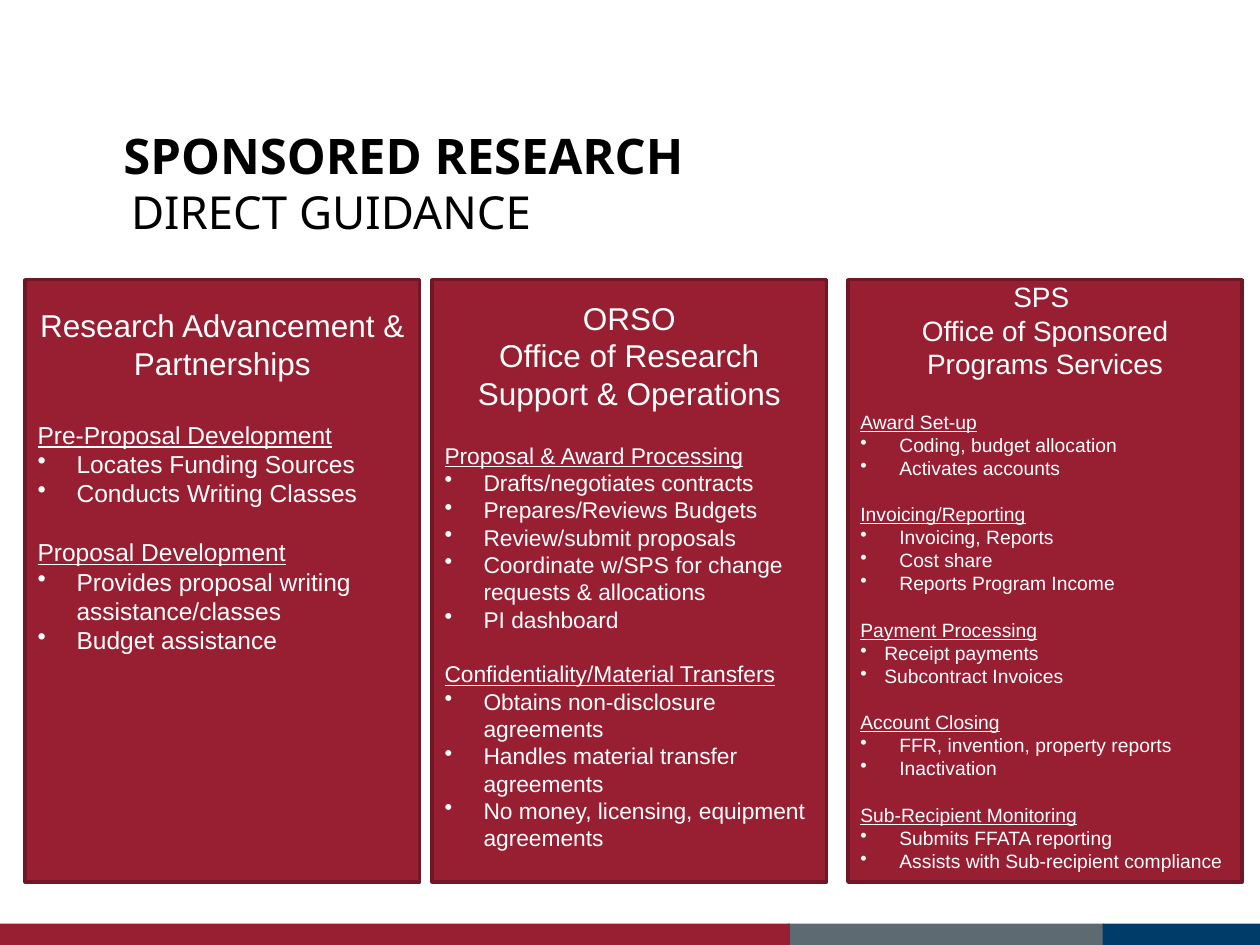
import pptx
import pptx.util
import pptx.dml.color
import pptx.enum.shapes
import pptx.enum.text
import pptx.oxml

Inches = pptx.util.Inches
Pt = pptx.util.Pt
Align = pptx.enum.text.PP_ALIGN
Anchor = pptx.enum.text.MSO_ANCHOR

COLORS = {"red": "981E32", "edge": "701625", "gray": "5E6A71",
          "blue": "003C69", "ink": "000000", "white": "FFFFFF"}

BARS = [(6.25, 2.51, "gray"), (8.75, 1.25, "blue"), (0, 6.27, "red")]

# Each card: left, top inset, head size, text size, gap under head,
# head lines, then sections of (name, indent, items)
CARDS = [
    (0.2, 0.21, 18, 14, 21.6, ["Research Advancement &", "Partnerships"], [
        ("Pre-Proposal Development", 0.31,
         ["Locates Funding Sources", "Conducts Writing Classes"]),
        ("Proposal Development", 0.31,
         ["Provides proposal writing assistance/classes",
          "Budget assistance"]),
    ]),
    (3.43, 0.15, 18, 13, 16.8,
     ["ORSO", "Office of Research Support & Operations"], [
         ("Proposal & Award Processing", 0.31,
          ["Drafts/negotiates contracts", "Prepares/Reviews Budgets",
           "Review/submit proposals",
           "Coordinate w/SPS for change requests & allocations",
           "PI dashboard"]),
         ("Confidentiality/Material Transfers", 0.31,
          ["Obtains non-disclosure agreements",
           "Handles material transfer agreements",
           "No money, licensing, equipment agreements"]),
     ]),
    (6.73, 0, 16, 11, 16.8,
     ["SPS ", "Office of Sponsored Programs Services"], [
         ("Award Set-up", 0.31,
          ["Coding, budget allocation", "Activates accounts"]),
         ("Invoicing/Reporting", 0.31,
          ["Invoicing, Reports", "Cost share", "Reports Program Income"]),
         ("Payment Processing", 0.19,
          ["Receipt payments", "Subcontract Invoices"]),
         ("Account Closing", 0.31,
          ["FFR, invention, property reports", "Inactivation"]),
         ("Sub-Recipient Monitoring", 0.31,
          ["Submits FFATA reporting",
           "Assists with Sub-recipient compliance"]),
     ]),
]


def rgb(name):
    return pptx.dml.color.RGBColor.from_string(COLORS[name])


def indent(para, left, hang, mark=None):
    """Set left margin and first-line indent, with a bullet or none."""
    props = para._p.get_or_add_pPr()
    props.set("marL", str(Inches(left)))
    props.set("indent", str(Inches(-hang)))
    tag = "a:buChar" if mark else "a:buNone"
    bullet = pptx.oxml.xmlchemy.OxmlElement(tag)
    if mark:
        bullet.set("char", mark)
    props.append(bullet)


class Deck:
    """Holds the style and the current slide."""

    head_font = "Noto Sans"
    text_font = "Arial"
    leading = 1.2

    def __init__(self):
        self.prs = pptx.Presentation()
        self.prs.slide_width = Inches(10)
        self.prs.slide_height = Inches(7.5)
        self.slide = self.prs.slides.add_slide(self.prs.slide_layouts[1])

    def style(self, para, font, size, color):
        para.font.name = font
        para.font.size = Pt(size)
        para.font.color.rgb = rgb(color)

    def holder(self, shape, box, text, size, anchor):
        """Move and fill a placeholder; return its paragraph."""
        shape.left, shape.top, shape.width, shape.height = map(Inches, box)
        frame = shape.text_frame
        frame.text = text
        frame.word_wrap = True
        frame.auto_size = pptx.enum.text.MSO_AUTO_SIZE.NONE
        frame.vertical_anchor = anchor
        para = frame.paragraphs[0]
        para.alignment = Align.LEFT
        self.style(para, self.head_font, size, "ink")
        return para

    def rect(self, left, top, width, height, fill, edge=None):
        shape = self.slide.shapes.add_shape(
            pptx.enum.shapes.MSO_SHAPE.RECTANGLE,
            *map(Inches, (left, top, width, height)))
        shape.shadow.inherit = False
        shape.fill.solid()
        shape.fill.fore_color.rgb = rgb(fill)
        if edge:
            shape.line.color.rgb = rgb(edge)
            shape.line.width = Pt(2)
        else:
            shape.line.fill.background()
        return shape

    def line(self, frame, text, size, align=Align.LEFT, gap=0):
        """Add a paragraph, using the empty first one if it is there."""
        para = frame.paragraphs[0]
        if para.runs:
            para = frame.add_paragraph()
        para.text = text
        para.alignment = align
        para.space_before = Pt(gap)
        self.style(para, self.text_font, size, "white")
        return para

    def card(self, left, inset, head, size, gap, title, parts):
        frame = self.rect(left, 2.22, 3.13, 4.78, "red", "edge").text_frame
        frame.word_wrap = True
        frame.vertical_anchor = Anchor.TOP
        frame.margin_top = Inches(inset)
        for text in title:
            self.line(frame, text, head, Align.CENTER)
        for name, hang, items in parts:
            self.line(frame, name, size, gap=gap).font.underline = True
            for item in items:
                indent(self.line(frame, item, size), hang, hang, "•")
            gap = size * self.leading


def main():
    deck = Deck()
    title, body = deck.slide.placeholders
    para = deck.holder(title, (0.88, 0.99, 8.5, 0.53), "SPONSORED RESEARCH",
                       28, Anchor.BOTTOM)
    para.font.bold = True
    para.line_spacing = 0.9
    para = deck.holder(body, (0.76, 1.41, 8.5, 0.66), "DIRECT GUIDANCE",
                       26, Anchor.TOP)
    para.space_before = Pt(12)
    indent(para, 0.18, 0)
    for left, width, fill in BARS:
        deck.rect(left, 7.33, width, 0.17, fill)
    for card in CARDS:
        deck.card(*card)
    deck.prs.save("out.pptx")


if __name__ == "__main__":
    main()
